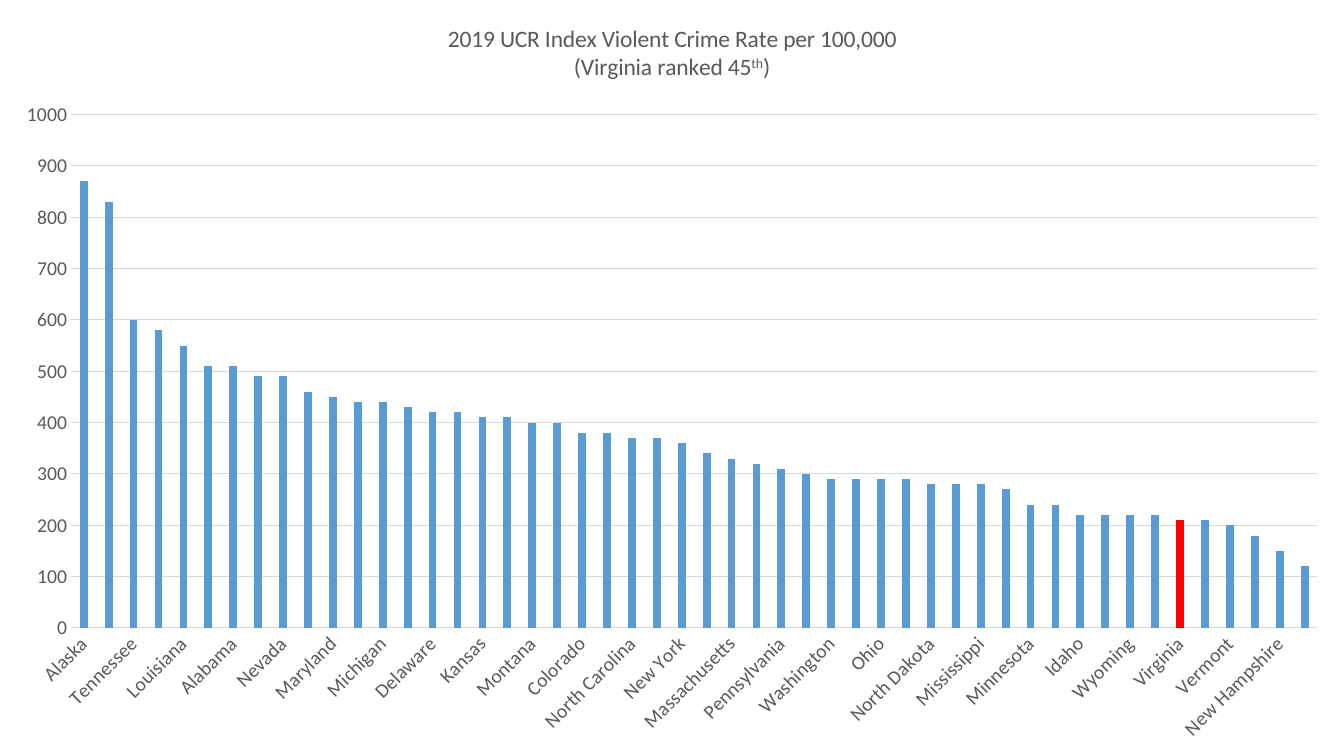
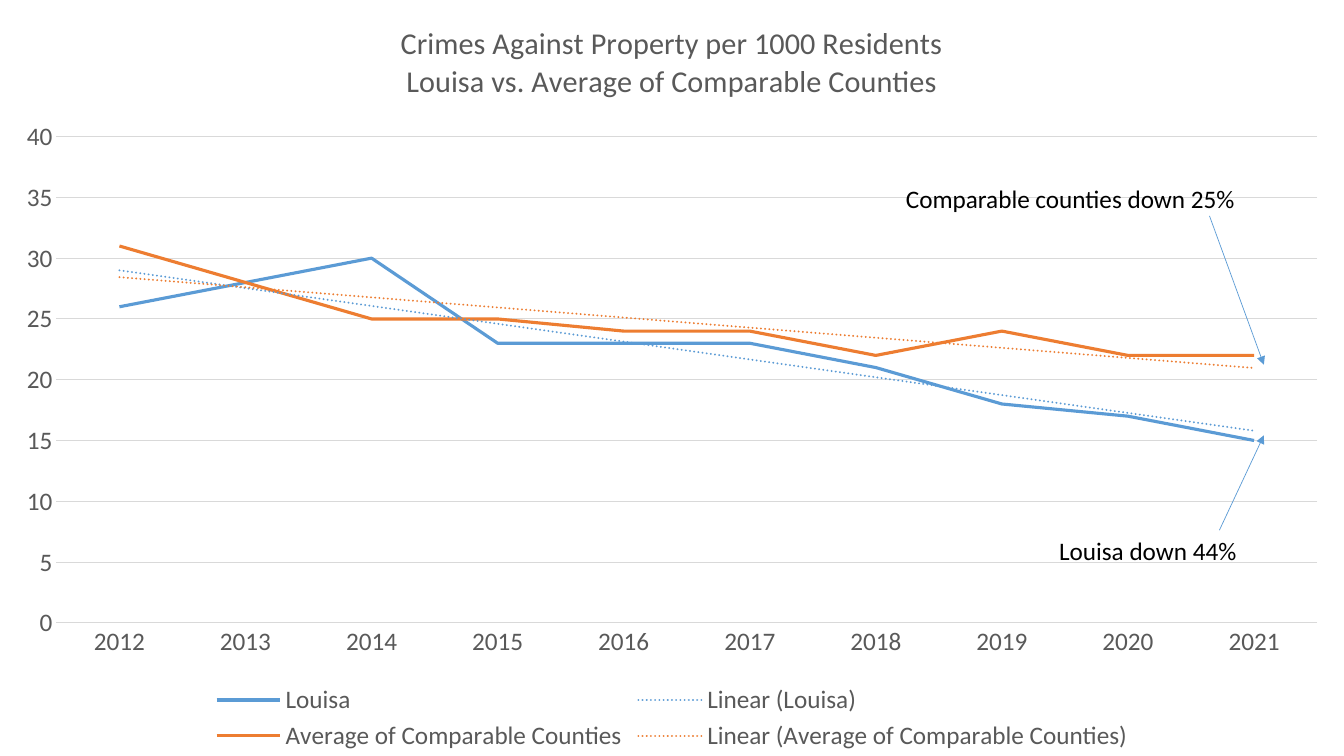
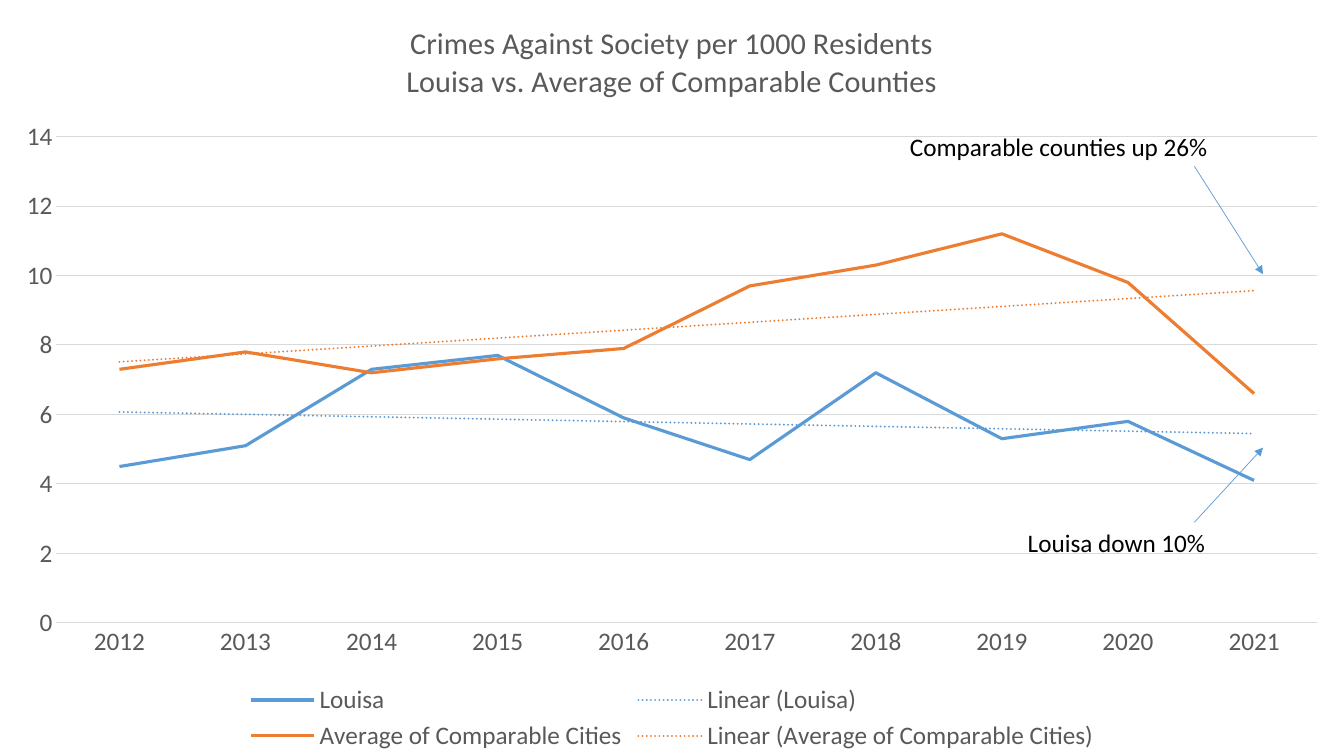
"""Build a three-slide deck of crime rate charts."""
from dataclasses import dataclass

from lxml.etree import SubElement
from pptx import Presentation
from pptx.chart.axis import _BaseAxis
from pptx.chart.chart import Chart
from pptx.chart.data import CategoryChartData
from pptx.chart.series import LineSeries
from pptx.dml.color import RGBColor
from pptx.enum.chart import XL_CHART_TYPE, XL_LEGEND_POSITION, XL_TICK_MARK
from pptx.enum.shapes import MSO_CONNECTOR
from pptx.enum.text import MSO_AUTO_SIZE
from pptx.oxml import parse_xml
from pptx.oxml.ns import nsdecls, qn
from pptx.slide import Slide
from pptx.text.text import Font
from pptx.util import Cm, Pt


@dataclass(frozen=True)
class Theme:
    font: str = "Calibri"
    text: str = "000000"
    muted: str = "595959"
    grid: str = "D9D9D9"
    blue: str = "5B9BD5"
    orange: str = "ED7D31"
    highlight: str = "FF0000"
    bar_size: float = 14
    line_size: float = 18
    title_scale: float = 1.2
    grid_width: float = 0.75
    series_width: float = 2.25
    trend_width: float = 1.5
    arrow_width: float = 0.5


@dataclass(frozen=True)
class Callout:
    text: str
    left: float
    top: float
    width: float
    arrow_start: tuple[float, float]
    arrow_end: tuple[float, float]
    wrap: bool = False


@dataclass(frozen=True)
class Trend:
    subject: str
    maximum: float
    step: float
    series: dict[str, list[float]]
    callouts: list[Callout]


THEME = Theme()
PAGE_WIDTH, PAGE_HEIGHT = Cm(33.87), Cm(19.05)
CALLOUT_HEIGHT = Cm(1.02)
YEARS = [str(year) for year in range(2012, 2022)]

STATE_RATES = {
    "Alaska": 870, "New Mexico": 830, "Tennessee": 600, "Arkansas": 580,
    "Louisiana": 550, "South Carolina": 510, "Alabama": 510, "Missouri": 490,
    "Nevada": 490, "Arizona": 460, "Maryland": 450, "California": 440,
    "Michigan": 440, "Oklahoma": 430, "Delaware": 420, "Texas": 420,
    "Kansas": 410, "Illinois": 410, "Montana": 400, "South Dakota": 400,
    "Colorado": 380, "Florida": 380, "North Carolina": 370, "Indiana": 370,
    "New York": 360, "Georgia": 340, "Massachusetts": 330, "West Virginia": 320,
    "Pennsylvania": 310, "Nebraska": 300, "Washington": 290, "Wisconsin": 290,
    "Ohio": 290, "Hawaii": 290, "North Dakota": 280, "Oregon": 280,
    "Mississippi": 280, "Iowa": 270, "Minnesota": 240, "Utah": 240,
    "Idaho": 220, "Rhode Island": 220, "Wyoming": 220, "Kentucky": 220,
    "Virginia": 210, "New Jersey": 210, "Vermont": 200, "Connecticut": 180,
    "New Hampshire": 150, "Maine": 120,
}

TRENDS = [
    Trend(
        "Property", 40, 5,
        {
            "Louisa": [26, 28, 30, 23, 23, 23, 21, 18, 17, 15],
            "Average of Comparable Counties": [31, 28, 25, 25, 24, 24, 22, 24, 22, 22],
        },
        [
            Callout("Louisa down 44%", 26.44, 13.36, 5.03, (30.73, 13.36), (31.85, 10.97)),
            Callout("Comparable counties down 25%", 22.58, 4.5, 8.89, (30.48, 5.44), (31.85, 9.19)),
        ],
    ),
    Trend(
        "Society", 14, 2,
        {
            "Louisa": [4.5, 5.1, 7.3, 7.7, 5.9, 4.7, 7.2, 5.3, 5.8, 4.1],
            "Average of Comparable Cities": [7.3, 7.8, 7.2, 7.6, 7.9, 9.7, 10.3, 11.2, 9.8, 6.6],
        },
        [
            Callout("Louisa down 10%", 25.65, 13.16, 5.03, (30.1, 13.16), (31.83, 11.28)),
            Callout("Comparable counties up 26%", 22.68, 3.18, 9.14, (30.1, 4.19), (31.83, 6.91), True),
        ],
    ),
]


def style_font(font: Font, size: float, color: str) -> None:
    font.name = THEME.font
    font.size = Pt(size)
    font.bold = False
    font.color.rgb = RGBColor.from_string(color)


def style_axis(axis: _BaseAxis, size: float) -> None:
    axis.major_tick_mark = axis.minor_tick_mark = XL_TICK_MARK.NONE
    style_font(axis.tick_labels.font, size, THEME.muted)


def add_title(chart: Chart, lines: list[str], size: float) -> None:
    chart.has_title = True
    chart.chart_title.include_in_layout = False
    frame = chart.chart_title.text_frame
    for index, line in enumerate(lines):
        paragraph = frame.add_paragraph() if index else frame.paragraphs[0]
        style_font(paragraph.font, size * THEME.title_scale, THEME.muted)
        for position, part in enumerate(line.split("^")):
            span = paragraph.add_run()
            span.text = part
            if position == 1:
                span._r.get_or_add_rPr().set("baseline", "30000")


def add_full_page_chart(
    page: Slide, kind: XL_CHART_TYPE, categories: list[str], series: dict[str, list[float]],
    title: list[str], size: float, maximum: float, step: float, number_format: str,
) -> Chart:
    data = CategoryChartData()
    data.categories = categories
    for name, values in series.items():
        data.add_series(name, values)
    chart = page.shapes.add_chart(kind, 0, 0, PAGE_WIDTH, PAGE_HEIGHT, data).chart
    style_font(chart.font, size, THEME.text)
    add_title(chart, title, size)
    chart.has_legend = False
    chart.plots[0].vary_by_categories = False
    style_axis(chart.category_axis, size)
    value_axis = chart.value_axis
    style_axis(value_axis, size)
    value_axis.minimum_scale, value_axis.maximum_scale = 0, maximum
    value_axis.major_unit = step
    value_axis.tick_labels.number_format = number_format
    value_axis.tick_labels.number_format_is_linked = False
    value_axis.format.line.fill.background()
    for line in (chart.category_axis.format.line, value_axis.major_gridlines.format.line):
        line.color.rgb = RGBColor.from_string(THEME.grid)
        line.width = Pt(THEME.grid_width)
    return chart


def add_trendline(series: LineSeries, color: str) -> None:
    trendline = parse_xml(
        f'<c:trendline {nsdecls("c", "a")}><c:spPr>'
        f'<a:ln w="{Pt(THEME.trend_width)}" cap="rnd"><a:solidFill><a:srgbClr val="{color}"/></a:solidFill>'
        '<a:prstDash val="sysDot"/></a:ln></c:spPr><c:trendlineType val="linear"/>'
        '<c:dispRSqr val="0"/><c:dispEq val="0"/></c:trendline>'
    )
    series._element.find(qn("c:cat")).addprevious(trendline)


def add_callout(page: Slide, callout: Callout) -> None:
    box = page.shapes.add_textbox(
        Cm(callout.left), Cm(callout.top), Cm(callout.width), CALLOUT_HEIGHT
    )
    frame = box.text_frame
    frame.word_wrap = callout.wrap
    frame.auto_size = MSO_AUTO_SIZE.SHAPE_TO_FIT_TEXT
    paragraph = frame.paragraphs[0]
    paragraph.text = callout.text
    style_font(paragraph.font, THEME.line_size, THEME.text)
    ends = [Cm(value) for value in (*callout.arrow_start, *callout.arrow_end)]
    arrow = page.shapes.add_connector(MSO_CONNECTOR.STRAIGHT, *ends)
    arrow.line.color.rgb = RGBColor.from_string(THEME.blue)
    arrow.line.width = Pt(THEME.arrow_width)
    SubElement(arrow.line._get_or_add_ln(), qn("a:tailEnd"), type="triangle")
    SubElement(arrow._element.spPr, qn("a:effectLst"))


def build_state_page(page: Slide) -> None:
    chart = add_full_page_chart(
        page, XL_CHART_TYPE.COLUMN_CLUSTERED, list(STATE_RATES),
        {"Series 1": list(STATE_RATES.values())},
        ["2019 UCR Index Violent Crime Rate per 100,000", "(Virginia ranked 45^th^)"],
        THEME.bar_size, 1000, 100, "General",
    )
    labels = chart.category_axis._element.find(qn("c:txPr"))
    labels.find(qn("a:bodyPr")).set("rot", "-2700000")
    plot = chart.plots[0]
    plot.gap_width, plot.overlap = 219, -27
    bars = plot.series[0]
    virginia = bars.points[list(STATE_RATES).index("Virginia")]
    for item, color in ((bars, THEME.blue), (virginia, THEME.highlight)):
        item.format.fill.solid()
        item.format.fill.fore_color.rgb = RGBColor.from_string(color)


def build_trend_page(page: Slide, trend: Trend) -> None:
    chart = add_full_page_chart(
        page, XL_CHART_TYPE.LINE, YEARS, trend.series,
        [f"Crimes Against {trend.subject} per 1000 Residents",
         "Louisa vs. Average of Comparable Counties"],
        THEME.line_size, trend.maximum, trend.step, "#,##0",
    )
    chart.has_legend = True
    chart.legend.position = XL_LEGEND_POSITION.BOTTOM
    chart.legend.include_in_layout = False
    style_font(chart.legend.font, THEME.line_size, THEME.muted)
    for series, color in zip(chart.plots[0].series, (THEME.blue, THEME.orange)):
        series.smooth = False
        series.format.line.color.rgb = RGBColor.from_string(color)
        series.format.line.width = Pt(THEME.series_width)
        add_trendline(series, color)
    for callout in trend.callouts:
        add_callout(page, callout)


def main() -> None:
    deck = Presentation()
    deck.slide_width, deck.slide_height = PAGE_WIDTH, PAGE_HEIGHT
    blank = deck.slide_layouts[6]
    build_state_page(deck.slides.add_slide(blank))
    for trend in TRENDS:
        build_trend_page(deck.slides.add_slide(blank), trend)
    deck.save("out.pptx")


if __name__ == "__main__":
    main()
